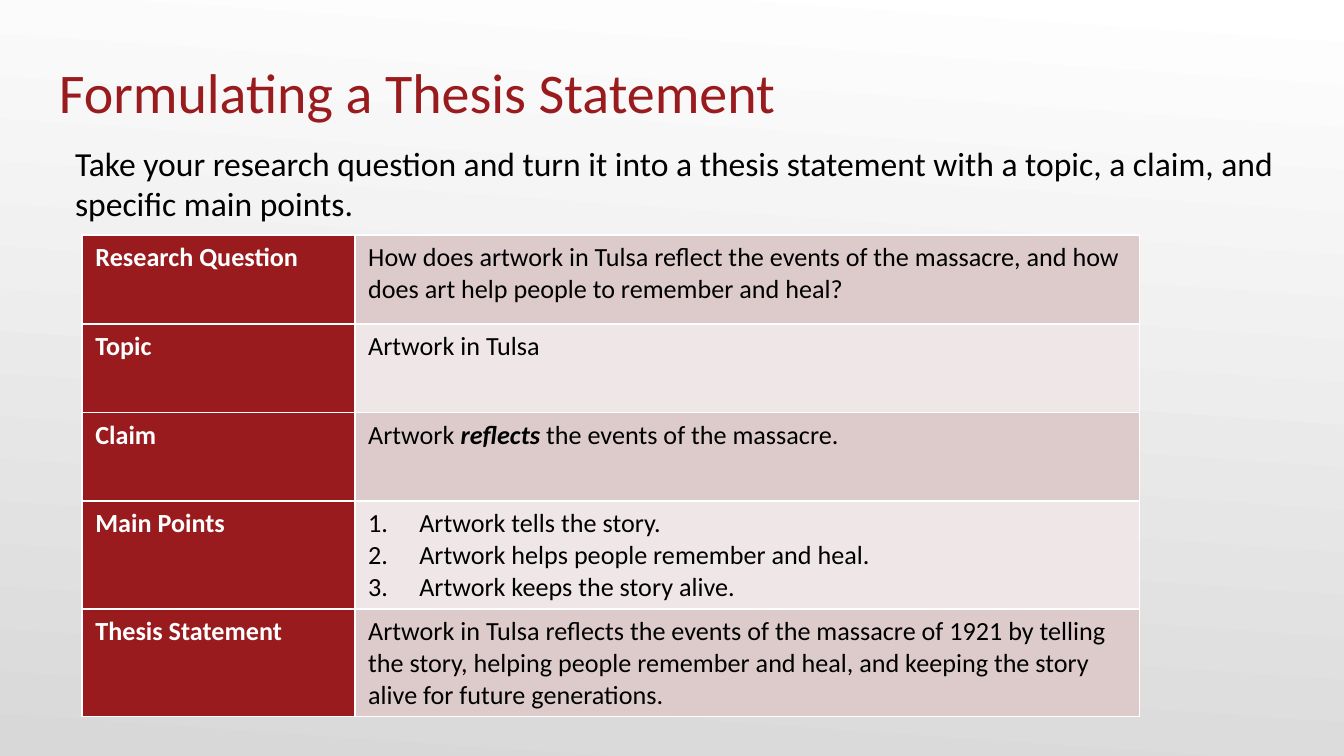
from lxml import etree
from pptx import Presentation
from pptx.dml.color import RGBColor
from pptx.enum.text import MSO_ANCHOR
from pptx.oxml.ns import qn
from pptx.util import Inches, Pt

# Content: each table row is a label and its paragraphs
TITLE = "Formulating a Thesis Statement"
INTRO = ("Take your research question and turn it into a thesis statement "
         "with a topic, a claim, and specific main points.")
ROWS = [
    ("Research Question", ["How does artwork in Tulsa reflect the events of the massacre, "
                           "and how does art help people to remember and heal?"]),
    ("Topic", ["Artwork in Tulsa"]),
    ("Claim", ["Artwork reflects the events of the massacre."]),
    ("Main Points", ["Artwork tells the story.",
                     "Artwork helps people remember and heal.",
                     "Artwork keeps the story alive."]),
    ("Thesis Statement", ["Artwork in Tulsa reflects the events of the massacre of 1921 by "
                          "telling the story, helping people remember and heal, and keeping "
                          "the story alive for future generations."]),
]
EMPHASIS = {"Claim": "reflects"}
NUMBERED = {"Main Points"}

THEME = {
    "font": "Calibri",
    "title_size": 30, "intro_size": 18, "table_size": 14,
    "accent": "991B1E", "text": "000000", "light": "FFFFFF",
    "bands": ("DDCBCB", "EFE7E7"),
    "background": ("FFFFFF", "D8D8D8"),
}
COLUMN_WIDTHS = (2.03, 5.84)
ROW_HEIGHT = 0.66
TABLE_HEIGHT = 3.59


def color(value):
    return RGBColor.from_string(value)


def style(run, size, rgb, bold=False, italic=False):
    font = run.font
    font.name, font.size = THEME["font"], Pt(size)
    font.bold, font.italic = bold, italic
    font.color.rgb = color(rgb)


def add_text(slide, text, top, height, size, rgb, indent=0):
    frame = slide.shapes.add_textbox(
        Inches(0.34), Inches(top), Inches(9.32), Inches(height)).text_frame
    frame.word_wrap = True
    frame.vertical_anchor = MSO_ANCHOR.TOP
    frame.margin_left = frame.margin_right = Inches(0.1)
    frame.margin_top = frame.margin_bottom = Inches(0.1)
    frame.text = text
    paragraph = frame.paragraphs[0]
    paragraph._p.get_or_add_pPr().set("marL", str(Inches(indent)))
    style(paragraph.runs[0], size, rgb)


def number(paragraph):
    properties = paragraph._p.get_or_add_pPr()
    properties.set("marL", str(Inches(0.38)))
    properties.set("indent", str(Inches(-0.38)))
    etree.SubElement(properties, qn("a:buAutoNum"), type="arabicPeriod")


def add_borders(cell):
    for position, side in enumerate(("lnL", "lnR", "lnT", "lnB")):
        line = etree.Element(qn(f"a:{side}"), w=str(Pt(1)))
        fill = etree.SubElement(line, qn("a:solidFill"))
        etree.SubElement(fill, qn("a:srgbClr"), val=THEME["light"])
        cell._tc.get_or_add_tcPr().insert(position, line)


def fill_cell(cell, paragraphs, fill, rgb, bold=False, emphasis=None, numbered=False):
    cell.fill.solid()
    cell.fill.fore_color.rgb = color(fill)
    add_borders(cell)
    cell.text_frame.text = "\n".join(paragraphs)
    for paragraph in cell.text_frame.paragraphs:
        if numbered:
            number(paragraph)
        if emphasis:
            before, after = paragraph.text.split(emphasis)
            paragraph.text = before
            for part in (emphasis, after):
                paragraph.add_run().text = part
        for run in paragraph.runs:
            stressed = run.text == emphasis
            style(run, THEME["table_size"], rgb, bold or stressed, stressed)


def add_thesis_table(slide):
    steps = slide.shapes.add_table(
        len(ROWS), len(COLUMN_WIDTHS), Inches(0.61), Inches(1.75),
        Inches(sum(COLUMN_WIDTHS)), Inches(TABLE_HEIGHT))
    table = steps.table
    table.first_row = table.horz_banding = False
    for column, width in zip(table.columns, COLUMN_WIDTHS):
        column.width = Inches(width)
    for index, (label, answer) in enumerate(ROWS):
        table.rows[index].height = Inches(ROW_HEIGHT)
        fill_cell(table.cell(index, 0), [label], THEME["accent"], THEME["light"], bold=True)
        fill_cell(table.cell(index, 1), answer, THEME["bands"][index % 2], THEME["text"],
                  emphasis=EMPHASIS.get(label), numbered=label in NUMBERED)
    # The longer answers make the table taller than its minimum rows
    steps.height = Inches(TABLE_HEIGHT)


def main():
    deck = Presentation()
    deck.slide_width = Inches(10)
    deck.slide_height = deck.slide_width * 9 // 16
    slide = deck.slides.add_slide(deck.slide_layouts[6])

    # Background gradient, angle counted counter-clockwise
    background = slide.background.fill
    background.gradient()
    background.gradient_angle = 266
    for position, (stop, rgb) in enumerate(
            zip(background.gradient_stops, THEME["background"])):
        stop.position = position
        stop.color.rgb = color(rgb)

    # Heading and introduction
    add_text(slide, TITLE, 0.33, 0.56, THEME["title_size"], THEME["accent"])
    add_text(slide, INTRO, 0.96, 0.79, THEME["intro_size"], THEME["text"], indent=0.12)

    # Steps from question to thesis
    add_thesis_table(slide)
    deck.save("out.pptx")


if __name__ == "__main__":
    main()
